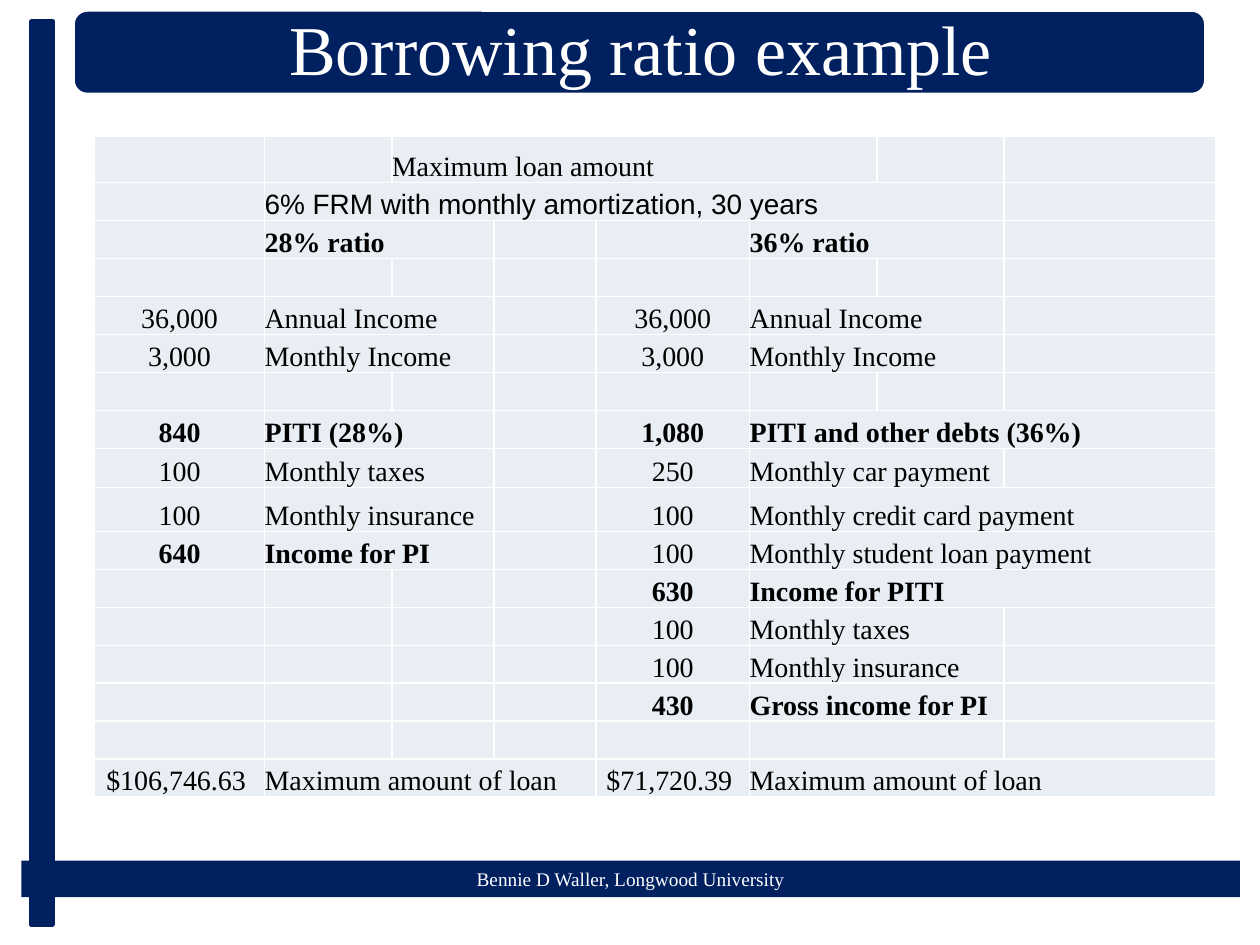
from pptx import Presentation
from pptx import util as u
from pptx.dml.color import RGBColor
from pptx.enum import shapes, text

HUES = {"navy": "002060", "white": "FFFFFF", "black": "000000", "cell": "E9EDF4"}
SERIF = "Times New Roman"
WIDE, HIGH = 10, 7.5
COLS = [1.35, 1.01, 0.81, 0.81, 1.22, 1.01, 1.01, 1.68]
ROWS, TALL = 17, {0: 0.37, 8: 0.31, 9: 0.35}
AREA = (0.75, 1.08, 8.92, 5.25)

HEADS = [
    (0, 2, 4, "Maximum loan amount", {}),
    (1, 1, 6, "6% FRM with monthly amortization, 30 years", {"font": "Arial"}),
    (2, 1, 2, "28% ratio", {"bold": True}),
    (2, 5, 2, "36% ratio", {"bold": True}),
    (15, 5, 2, "", {}),
]
LEFT = [
    (4, "36,000", "Annual Income", 2, False),
    (5, "3,000", "Monthly Income", 2, False),
    (7, "840", "PITI (28%)", 2, True),
    (8, "100", "Monthly taxes", 2, False),
    (9, "100", "Monthly insurance", 2, False),
    (10, "640", "Income for PI", 2, True),
    (16, "$106,746.63 ", "Maximum amount of loan", 3, False),
]
RIGHT = [
    (4, "36,000", "Annual Income", 2, False),
    (5, "3,000", "Monthly Income", 2, False),
    (7, "1,080", "PITI and other debts (36%)", 3, True),
    (8, "250", "Monthly car payment", 2, False),
    (9, "100", "Monthly credit card payment", 3, False),
    (10, "100", "Monthly student loan payment", 3, False),
    (11, "630", "Income for PITI", 3, True),
    (12, "100", "Monthly taxes", 2, False),
    (13, "100", "Monthly insurance", 2, False),
    (14, "430", "Gross income for PI", 2, True),
    (16, "$71,720.39 ", "Maximum amount of loan", 3, False),
]


def hue(name):
    return RGBColor.from_string(HUES[name])


def box(*sides):
    return [u.Inches(side) for side in sides]


def write(frame, words, size=16, font=SERIF, color="black", bold=False, center=False):
    para = frame.paragraphs[0]
    para.alignment = text.PP_ALIGN.CENTER if center else text.PP_ALIGN.LEFT
    run = para.add_run()
    run.text = words
    run.font.size = u.Pt(size)
    run.font.name = font
    run.font.bold = bold
    run.font.color.rgb = hue(color)
    return para


def bar(slide, kind, area, line=None, width=0):
    shape = slide.shapes.add_shape(kind, *box(*area))
    shape.shadow.inherit = False
    shape.fill.solid()
    shape.fill.fore_color.rgb = hue("navy")
    if line:
        shape.line.color.rgb = hue(line)
        shape.line.width = u.Pt(width)
    else:
        shape.line.fill.background()
    return shape


def head(slide, words):
    bar(slide, shapes.MSO_SHAPE.ROUNDED_RECTANGLE, (0.58, 0.08, 8.99, 0.67), "white", 2)
    title = slide.shapes.title
    title.left, title.top, title.width, title.height = box(0.62, 0.12, 8.93, 0.6)
    frame = title.text_frame
    frame.word_wrap = True
    frame.auto_size = text.MSO_AUTO_SIZE.NONE
    frame.vertical_anchor = text.MSO_ANCHOR.MIDDLE
    frame.margin_left = frame.margin_right = u.Inches(0.17)
    frame.margin_top = frame.margin_bottom = u.Inches(0.08)
    para = write(frame, words, size=40, color="white", center=True)
    para.line_spacing = 0.9
    slide.shapes._spTree.append(title._element)


def grid(slide):
    table = slide.shapes.add_table(ROWS, len(COLS), *box(*AREA)).table
    table.first_row = table.horz_banding = False
    for col, width in zip(table.columns, COLS):
        col.width = u.Inches(width)
    rest = (AREA[3] - sum(TALL.values())) / (ROWS - len(TALL))
    for num, row in enumerate(table.rows):
        row.height = u.Inches(TALL.get(num, rest))
    for cell in table.iter_cells():
        cell.fill.solid()
        cell.fill.fore_color.rgb = hue("cell")
        cell.vertical_anchor = text.MSO_ANCHOR.BOTTOM
        cell.margin_left = cell.margin_right = 0
        cell.margin_top = cell.margin_bottom = 0
        end = cell.text_frame.paragraphs[0]._p.get_or_add_endParaRPr()
        end.set("sz", "1600")
    return table


def put(table, row, col, span, words, **form):
    cell = table.cell(row, col)
    if span > 1:
        cell.merge(table.cell(row, col + span - 1))
    if words:
        write(cell.text_frame, words, **form)


def fill(table, start, lines):
    for row, sum_, label, span, bold in lines:
        put(table, row, start, 1, sum_, bold=bold, center=True)
        put(table, row, start + 1, span, label, bold=bold)


def main():
    deck = Presentation()
    deck.slide_width, deck.slide_height = box(WIDE, HIGH)
    slide = deck.slides.add_slide(deck.slide_layouts[5])
    rect = shapes.MSO_SHAPE.RECTANGLE
    foot = bar(slide, rect, (0.17, 6.83, 9.67, 0.29))
    write(foot.text_frame, "Bennie D Waller, Longwood University",
          size=11, color="white", center=True)
    bar(slide, rect, (0.25, 0.17, 0.17, 7.17), "navy", 2.5)
    head(slide, "Borrowing ratio example")
    table = grid(slide)
    for row, col, span, words, form in HEADS:
        put(table, row, col, span, words, **form)
    fill(table, 0, LEFT)
    fill(table, 4, RIGHT)
    deck.save("out.pptx")


if __name__ == "__main__":
    main()
